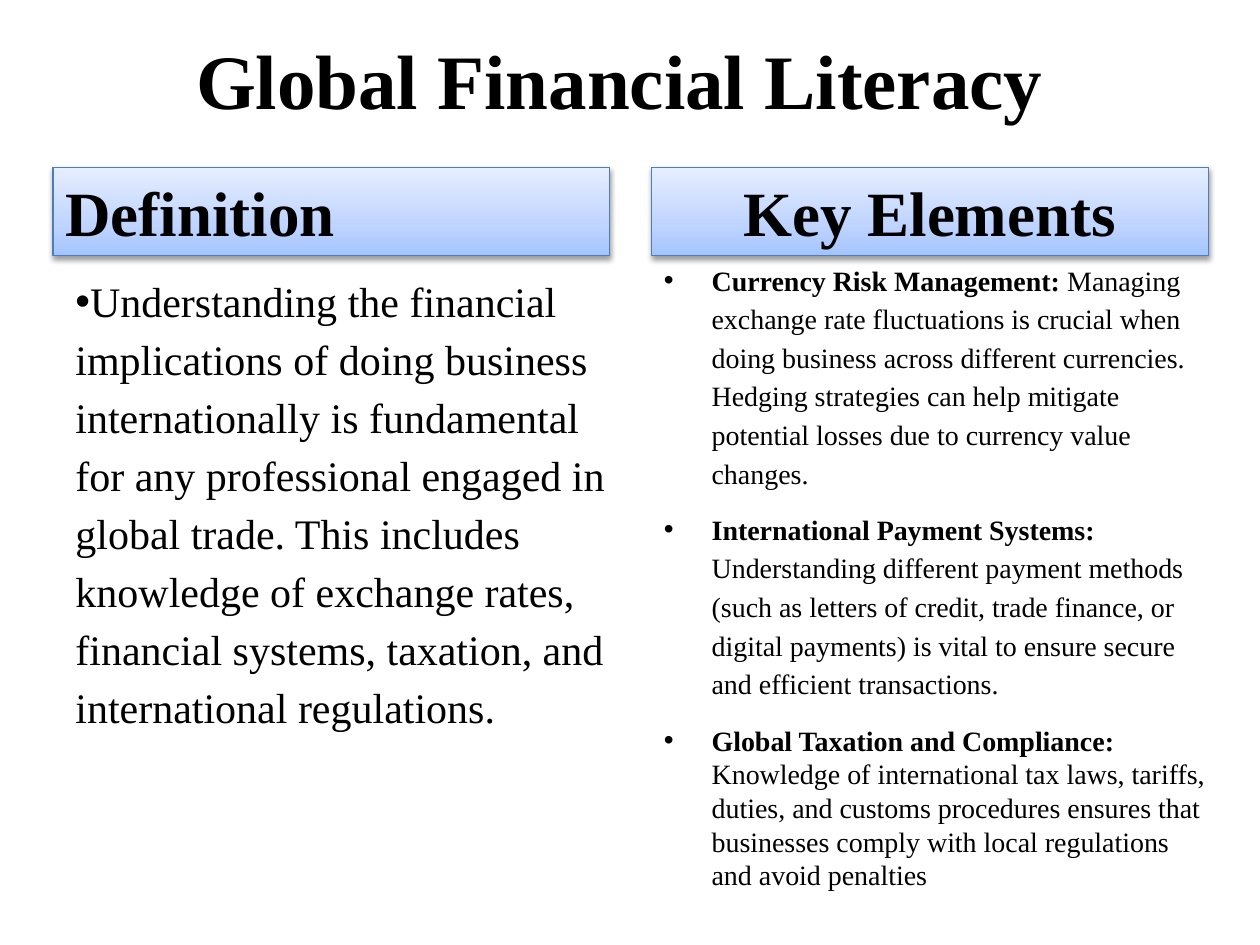
"""Build the Global Financial Literacy slide with a definition and its key elements."""
from copy import deepcopy

from lxml import etree
from pptx import Presentation
from pptx.dml.color import RGBColor
from pptx.enum.shapes import MSO_SHAPE
from pptx.enum.text import MSO_ANCHOR, PP_ALIGN
from pptx.oxml.ns import qn
from pptx.util import Inches, Pt

LEFT, CENTER = PP_ALIGN.LEFT, PP_ALIGN.CENTER
MIDDLE, BOTTOM = MSO_ANCHOR.MIDDLE, MSO_ANCHOR.BOTTOM
RECTANGLE = MSO_SHAPE.RECTANGLE
COLORS = {"text": "000000", "border": "4B7EBC", "shadow": "000000",
          "deep": "A4C4FF", "soft": "BFD4FF", "pale": "E6EEFF"}
FONT = "Times New Roman"


def add_text(paragraph, text, size, bold=False):
    run = paragraph.add_run()
    run.text = text
    formats = {"name": FONT, "size": Pt(size), "bold": bold}
    for attribute, value in formats.items():
        setattr(run.font, attribute, value)
    run.font.color.rgb = RGBColor.from_string(COLORS["text"])


def format_bullet(paragraph, margin, spacing):
    paragraph.alignment = LEFT
    for attribute, value in spacing.items():
        setattr(paragraph, attribute, value)
    properties = paragraph._p.get_or_add_pPr()
    properties.set("marL", str(Inches(margin)))
    properties.set("indent", str(Inches(-0.38)))
    etree.SubElement(properties, qn("a:buFont"), typeface="Arial")
    etree.SubElement(properties, qn("a:buChar"), char="•")


prs = Presentation()
prs.slide_width, prs.slide_height = Inches(10), Inches(7.5)
slide = prs.slides.add_slide(prs.slide_layouts[5])

title = slide.shapes.title
title_box = {"left": 0.42, "top": 0, "width": 9, "height": 1.25}
for attribute, value in title_box.items():
    setattr(title, attribute, Inches(value))
title.text_frame.vertical_anchor = MIDDLE
title.text_frame.paragraphs[0].alignment = CENTER
add_text(title.text_frame.paragraphs[0], "Global Financial Literacy", 44, True)

headings = [("Definition", 0.42, LEFT), ("Key Elements", 5.17, CENTER)]
for heading, left, alignment in headings:
    banner = slide.shapes.add_shape(
        RECTANGLE, Inches(left), Inches(1.33), Inches(4.42), Inches(0.7))
    banner.fill.gradient()
    banner.fill.gradient_angle = 90
    first_stop = banner.fill._fill._gradFill.gsLst[0]
    first_stop.addnext(deepcopy(first_stop))
    stops = [(0, "deep"), (0.35, "soft"), (1, "pale")]
    for stop, (position, color) in zip(banner.fill.gradient_stops, stops):
        stop.position = position
        stop.color.rgb = RGBColor.from_string(COLORS[color])
    banner.line.color.rgb = RGBColor.from_string(COLORS["border"])
    banner.line.width = Pt(0.75)

    banner.shadow.inherit = False
    effects = banner._element.spPr.find(qn("a:effectLst"))
    shadow = etree.SubElement(
        effects, qn("a:outerShdw"), blurRad=str(Pt(3.1)), dist=str(Pt(1.6)),
        dir="5400000", rotWithShape="0")
    shadow_color = etree.SubElement(shadow, qn("a:srgbClr"), val=COLORS["shadow"])
    etree.SubElement(shadow_color, qn("a:alpha"), val="38000")

    banner.text_frame.vertical_anchor = BOTTOM
    banner.text_frame.paragraphs[0].alignment = alignment
    add_text(banner.text_frame.paragraphs[0], heading, 36, True)

loose = {"line_spacing": 1.15, "space_before": Pt(0), "space_after": Pt(10)}
tight = {"space_before": Pt(3.2)}

definition = slide.shapes.add_textbox(
    Inches(0.5), Inches(2.08), Inches(4.42), Inches(4.32)).text_frame
definition.word_wrap = True
format_bullet(definition.paragraphs[0], 0, loose)
add_text(definition.paragraphs[0],
         "Understanding the financial implications of doing business "
         "internationally is fundamental for any professional engaged in global "
         "trade. This includes knowledge of exchange rates, financial systems, "
         "taxation, and international regulations.", 24)

elements = [
    ("Currency Risk Management:",
     " Managing exchange rate fluctuations is crucial when doing business across "
     "different currencies. Hedging strategies can help mitigate potential losses "
     "due to currency value changes.", loose),
    ("International Payment Systems:",
     " Understanding different payment methods (such as letters of credit, trade "
     "finance, or digital payments) is vital to ensure secure and efficient "
     "transactions.", loose),
    ("Global Taxation and Compliance:",
     " Knowledge of international tax laws, tariffs, duties, and customs "
     "procedures ensures that businesses comply with local regulations and avoid "
     "penalties", tight),
]
key_elements = slide.shapes.add_textbox(
    Inches(5.17), Inches(2), Inches(4.5), Inches(5.12)).text_frame
key_elements.word_wrap = True
for index, (name, description, spacing) in enumerate(elements):
    element = key_elements.add_paragraph() if index else key_elements.paragraphs[0]
    format_bullet(element, 0.38, spacing)
    add_text(element, name, 16, True)
    add_text(element, description, 16)

prs.save("out.pptx")
